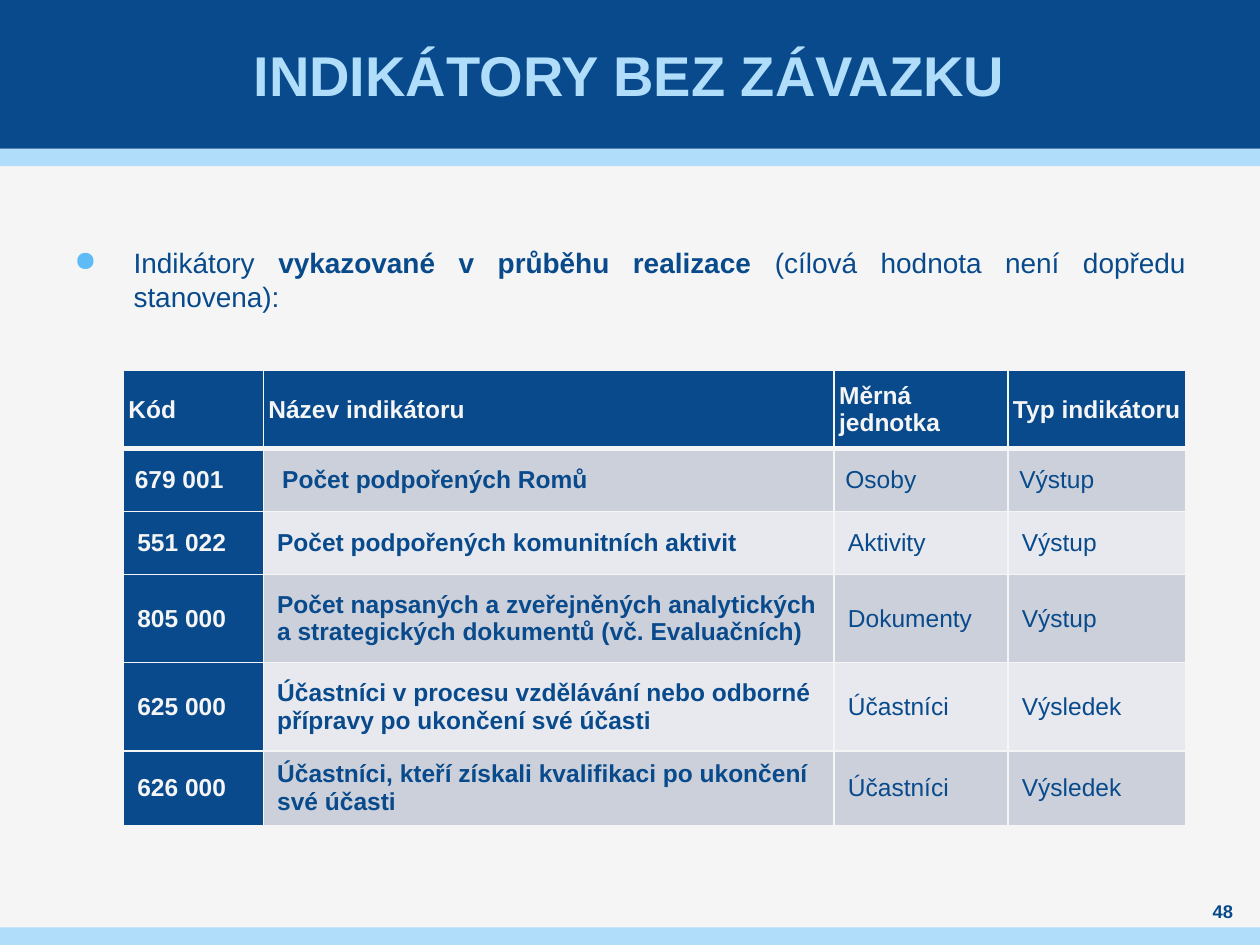
from lxml import etree
from pptx import Presentation
from pptx.dml.color import RGBColor
from pptx.enum import shapes, text
from pptx.oxml import ns
from pptx.util import Inches, Pt

NAVY, SKY, PAPER, BULLET = "084A8B", "AFDDFA", "F5F5F5", "5FBBF5"
BANDS = ["CCD0DA", "E7E9EE"]
COLUMNS = [1.11, 4.53, 1.38, 1.41]
ROWS = [0.62, 0.5, 0.5, 0.7, 0.7, 0.59]
INDICATORS = [
    ["Kód", "Název indikátoru", "Měrná jednotka", "Typ indikátoru"],
    ["679 001", "Počet podpořených Romů", "Osoby", "Výstup"],
    ["551 022", "Počet podpořených komunitních aktivit", "Aktivity", "Výstup"],
    ["805 000", "Počet napsaných a zveřejněných analytických a strategických "
     "dokumentů (vč. Evaluačních)", "Dokumenty", "Výstup"],
    ["625 000", "Účastníci v procesu vzdělávání nebo odborné přípravy "
     "po ukončení své účasti", "Účastníci", "Výsledek"],
    ["626 000", "Účastníci, kteří získali kvalifikaci po ukončení své účasti",
     "Účastníci", "Výsledek"],
]


def color(value):
    return RGBColor.from_string(value)


def paint(target, value):
    target.fill.solid()
    target.fill.fore_color.rgb = color(value)


def style_span(span, size, value, bold=False):
    span.font.name = "Arial"
    span.font.size = Pt(size)
    span.font.bold = bold
    span.font.color.rgb = color(value)


def set_frame(frame, side=0, top=0, anchor=text.MSO_ANCHOR.MIDDLE):
    frame.word_wrap = True
    frame.auto_size = text.MSO_AUTO_SIZE.NONE
    frame.vertical_anchor = anchor
    frame.margin_left = frame.margin_right = Inches(side)
    frame.margin_top, frame.margin_bottom = Inches(top), 0


def add_band(page, top, height, value):
    band = page.shapes.add_shape(shapes.MSO_SHAPE.RECTANGLE, 0, Inches(top),
                                 Inches(10), Inches(height))
    band.shadow.inherit = False
    band.line.fill.background()
    paint(band, value)


def set_title(page, wording):
    title = page.shapes.title
    title.left, title.top = Inches(0.39), 0
    title.width, title.height = Inches(9.21), Inches(1.18)
    title.text_frame.text = wording
    set_frame(title.text_frame, side=0.04)
    para = title.text_frame.paragraphs[0]
    para.alignment = text.PP_ALIGN.CENTER
    style_span(para.runs[0], 32, SKY, True)
    title.element.getparent().append(title.element)  # in front of the bands


def add_bullet(para):
    properties = para._p.get_or_add_pPr()
    properties.set("marL", str(Inches(0.47)))
    properties.set("indent", str(-Inches(0.47)))
    bullet_color = etree.SubElement(properties, ns.qn("a:buClr"))
    etree.SubElement(bullet_color, ns.qn("a:srgbClr"), val=BULLET)
    etree.SubElement(properties, ns.qn("a:buChar"), char="●")


def add_intro(page):
    box = page.shapes.add_textbox(Inches(0.59), Inches(1.55), Inches(8.82), Inches(5.15))
    set_frame(box.text_frame, top=0.4, anchor=text.MSO_ANCHOR.TOP)
    para = box.text_frame.paragraphs[0]
    para.alignment = text.PP_ALIGN.JUSTIFY
    add_bullet(para)
    for wording, bold in [("Indikátory ", False),
                          ("vykazované v průběhu realizace ", True),
                          ("(cílová hodnota není dopředu stanovena):", False)]:
        span = para.add_run()
        span.text = wording
        style_span(span, 16, NAVY, bold)


def add_page_number(page, number):
    box = page.shapes.add_textbox(Inches(9.45), Inches(7.13), Inches(0.51), Inches(0.2))
    box.text_frame.text = number
    set_frame(box.text_frame)
    para = box.text_frame.paragraphs[0]
    para.alignment = text.PP_ALIGN.CENTER
    style_span(para.runs[0], 10.5, NAVY, True)


def add_borders(cell, top, bottom):
    properties = cell._tc.get_or_add_tcPr()
    for side, width in zip("LRTB", [1, 1, top, bottom]):
        line = etree.SubElement(properties, ns.qn(f"a:ln{side}"), w=str(Pt(width)))
        fill = etree.SubElement(line, ns.qn("a:solidFill"))
        etree.SubElement(fill, ns.qn("a:srgbClr"), val=PAPER)


def side_inset(row, column):
    if row == 0:
        return 0
    if row == 1:
        return 0.11 if column == 1 else 0.05
    return 0.07


def fill_cell(cell, row, column, wording):
    dark = row == 0 or column == 0
    inset = side_inset(row, column)
    cell.text_frame.text = wording
    cell.vertical_anchor = text.MSO_ANCHOR.MIDDLE
    cell.margin_left, cell.margin_right = Inches(inset + 0.04), Inches(inset)
    cell.margin_top = cell.margin_bottom = 0
    para = cell.text_frame.paragraphs[0]
    para.space_before = para.space_after = Pt(3)
    style_span(para.runs[0], 14, PAPER if dark else NAVY, dark or column == 1)
    add_borders(cell, 3 if row == 1 else 1, 3 if row == 0 else 1)
    paint(cell, NAVY if dark else BANDS[(row - 1) % 2])


def add_indicator_table(page):
    table = page.shapes.add_table(len(ROWS), len(COLUMNS), Inches(0.98), Inches(2.94),
                                  Inches(sum(COLUMNS)), Inches(sum(ROWS))).table
    table.first_row = table.horz_banding = False
    for column, width in zip(table.columns, COLUMNS):
        column.width = Inches(width)
    for row, height in zip(table.rows, ROWS):
        row.height = Inches(height)
    for row, wordings in enumerate(INDICATORS):
        for column, wording in enumerate(wordings):
            fill_cell(table.cell(row, column), row, column, wording)


def main():
    deck = Presentation()
    deck.slide_width, deck.slide_height = Inches(10), Inches(7.5)
    page = deck.slides.add_slide(deck.slide_layouts[5])
    paint(page.background, PAPER)
    add_band(page, 1.18, 0.14, SKY)
    add_band(page, 0, 1.18, NAVY)
    add_band(page, 7.36, 0.14, SKY)
    set_title(page, "INDIKÁTORY BEZ ZÁVAZKU")
    add_intro(page)
    add_page_number(page, "48")
    add_indicator_table(page)
    deck.save("out.pptx")


if __name__ == "__main__":
    main()
